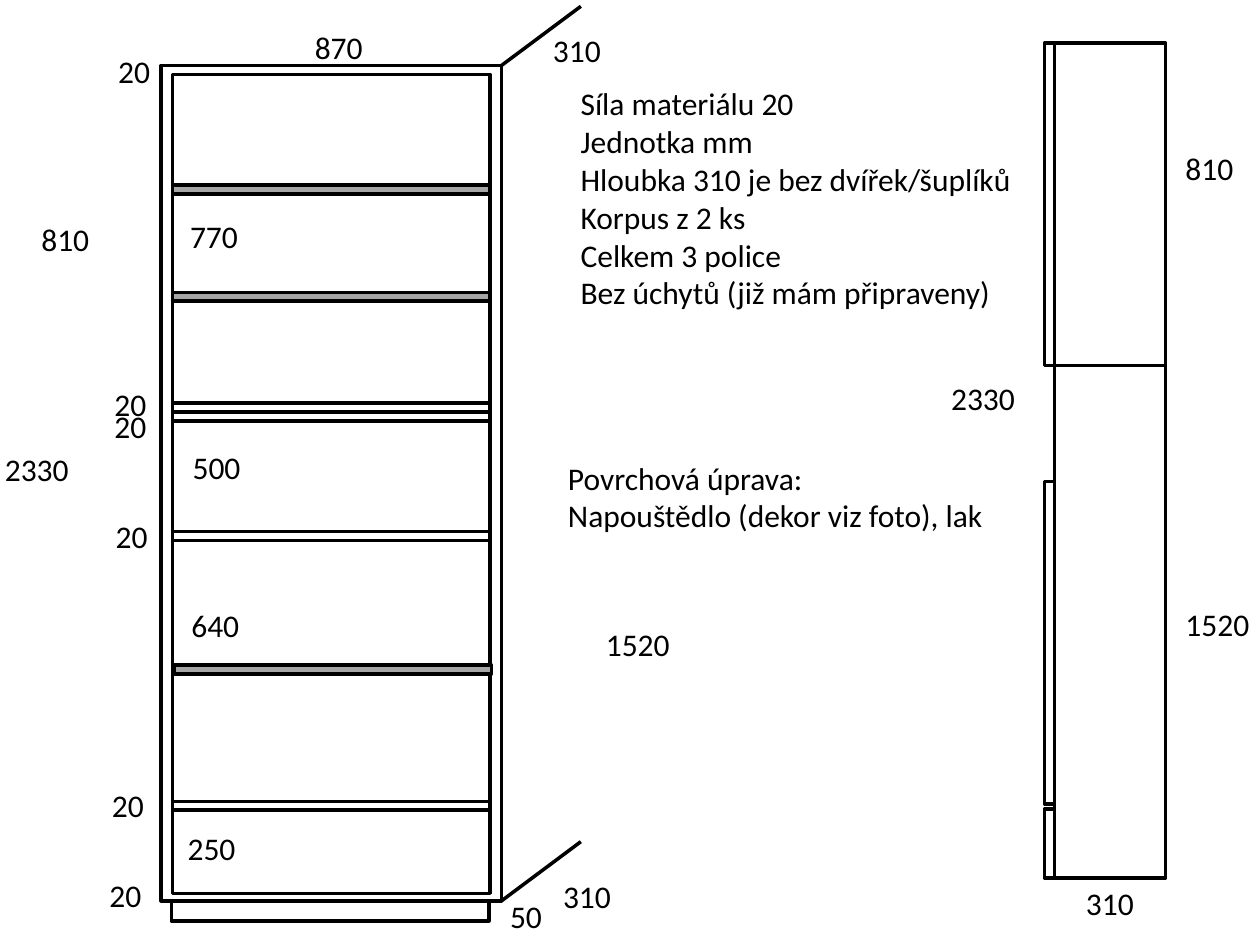
"""Draws a cabinet in front and side view with its dimensions in millimetres."""
from typing import NamedTuple, Optional

from lxml import etree
from pptx import Presentation
from pptx import util as u
from pptx.dml.color import RGBColor
from pptx.enum import shapes, text
from pptx.oxml import ns

BLACK = RGBColor(0x00, 0x00, 0x00)
GREY = RGBColor(0xA6, 0xA6, 0xA6)
FONT = "Calibri"
LOW, TALL = 0.4, 0.71
WIDTHS = {2: 0.46, 3: 0.59, 4: 0.71}
INNER, SPAN, THICK = 1.37, 2.52, 0.07
DOOR, DEPTH = 8.29, 0.08


class Panel(NamedTuple):
    left: float
    top: float
    width: float
    height: float
    fill: Optional[RGBColor] = None


class Edge(NamedTuple):
    left: float
    top: float
    right: float
    end: float


class Label(NamedTuple):
    words: str
    left: float
    top: float
    height: float = LOW


class Note(NamedTuple):
    lines: tuple
    left: float
    top: float
    width: float
    height: float


FRAME = [Panel(INNER, 0.59, SPAN, 6.5), Panel(1.28, 0.52, 2.7, 6.63)]
BOARDS = [Panel(INNER, top, SPAN, THICK) for top in (3.2, 3.27, 4.22, 6.36)]
SHELVES = [Panel(left, top, SPAN, THICK, GREY)
           for left, top in ((INNER, 1.47), (INNER, 2.32), (1.38, 5.28))]
PLINTH = [Panel(1.36, 7.15, SPAN, 0.16)]
SIDE = [Panel(8.37, 0.34, 0.88, 6.63)]
FRONTS = [Panel(DOOR, top, DEPTH, height)
          for top, height in ((0.34, 2.56), (3.82, 2.56), (6.42, 0.55))]
PANELS = FRAME + BOARDS + SHELVES + PLINTH + SIDE + FRONTS

EDGES = [
    Edge(3.98, 7.15, 4.61, 6.68),
    Edge(3.98, 0.52, 4.61, 0.05),
    Edge(8.38, 2.9, 9.25, 2.9),
]

LABELS = [
    Label("2330", -0.06, 3.52),
    Label("810", 0.23, 1.7),
    Label("870", 2.4, 0.17),
    Label("310", 4.29, 0.2),
    Label("310", 4.37, 6.91),
    Label("50", 3.95, 7.07),
    Label("770", 1.41, 1.67, TALL),
    Label("500", 1.43, 3.51),
    Label("640", 1.42, 4.76, TALL),
    Label("250", 1.39, 6.53),
    Label("1520", 4.71, 4.91),
    Label("2330", 7.45, 2.96),
    Label("810", 9.31, 1.13),
    Label("1520", 9.31, 4.75),
    Label("310", 8.52, 6.97),
] + [Label("20", left, top, TALL) for left, top in (
    (0.84, 0.36), (0.81, 3.01), (0.81, 3.18),
    (0.82, 4.05), (0.79, 6.19), (0.77, 6.9))]

NOTES = [
    Note(("Síla materiálu 20", "Jednotka mm",
          "Hloubka 310 je bez dvířek/šuplíků", "Korpus z 2 ks",
          "Celkem 3 police", "Bez úchytů (již mám připraveny)"),
         4.51, 0.62, 3.66, 1.92),
    Note(("Povrchová úprava:", "Napouštědlo (dekor viz foto), lak"),
         4.41, 3.59, 3.53, 0.71),
]


def stroke(line) -> None:
    line.color.rgb = BLACK
    line.width = u.Pt(2)


def draw_panel(slide, panel: Panel) -> None:
    box = slide.shapes.add_shape(
        shapes.MSO_SHAPE.RECTANGLE, *map(u.Inches, panel[:4]))
    box.shadow.inherit = False
    if panel.fill is None:
        box.fill.background()
    else:
        box.fill.solid()
        box.fill.fore_color.rgb = panel.fill
    stroke(box.line)


def draw_edge(slide, edge: Edge) -> None:
    line = slide.shapes.add_connector(
        shapes.MSO_CONNECTOR.STRAIGHT, *map(u.Inches, edge))
    stroke(line.line)
    etree.SubElement(line._element.spPr, ns.qn("a:effectLst"))


def write(slide, lines: tuple, *, left: float, top: float, width: float,
          height: float, size: int = 18, color: RGBColor = BLACK) -> None:
    box = slide.shapes.add_textbox(*map(u.Inches, (left, top, width, height)))
    frame = box.text_frame
    frame.word_wrap = False
    frame.auto_size = text.MSO_AUTO_SIZE.SHAPE_TO_FIT_TEXT
    frame.text = "\n".join(lines)
    for para in frame.paragraphs:
        for run in para.runs:
            run.font.name = FONT
            run.font.size = u.Pt(size)
            run.font.color.rgb = color


def main() -> None:
    deck = Presentation()
    deck.slide_width, deck.slide_height = u.Inches(10), u.Inches(7.5)
    slide = deck.slides.add_slide(deck.slide_layouts[6])
    for panel in PANELS:
        draw_panel(slide, panel)
    for edge in EDGES:
        draw_edge(slide, edge)
    for label in LABELS:
        write(slide, (label.words,), left=label.left, top=label.top,
              width=WIDTHS[len(label.words)], height=label.height)
    for note in NOTES:
        write(slide, note.lines, left=note.left, top=note.top,
              width=note.width, height=note.height)
    deck.save("out.pptx")


if __name__ == "__main__":
    main()
